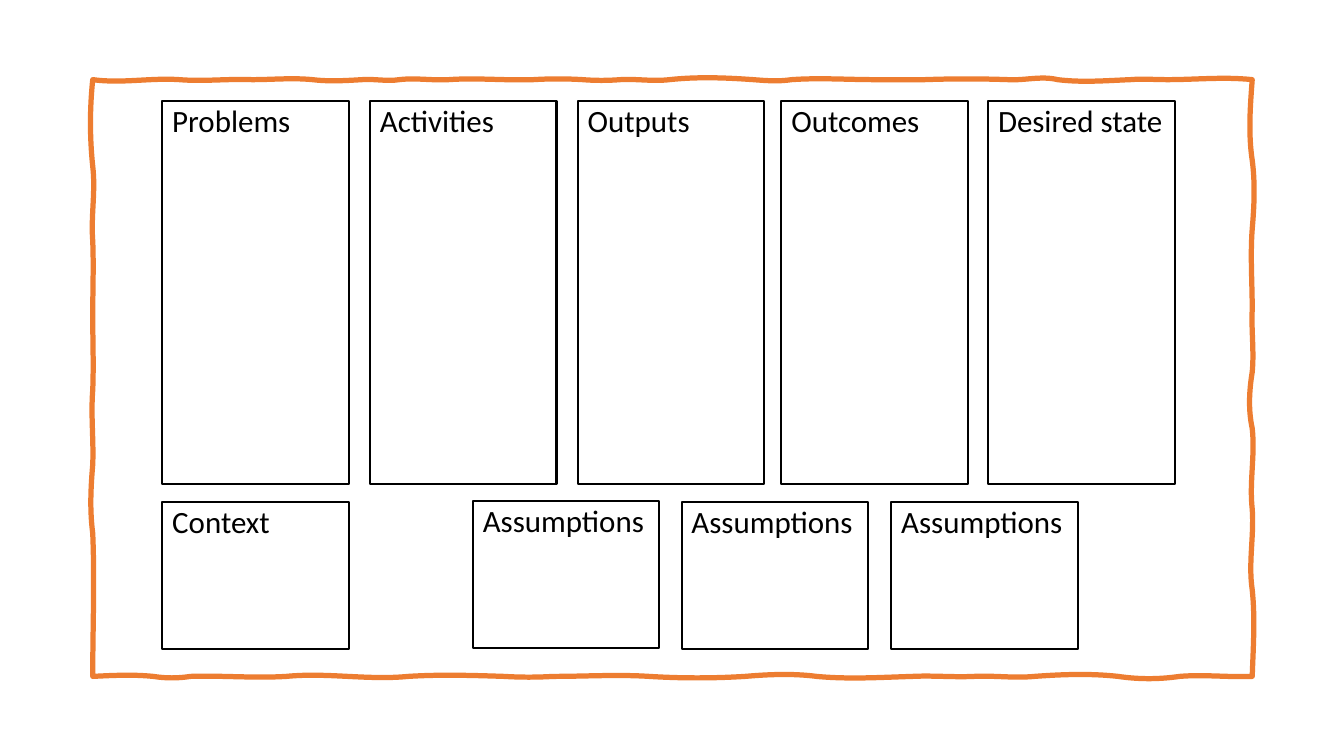
from lxml import etree
from pptx import Presentation
from pptx import util as u
from pptx.dml.color import RGBColor
from pptx.enum import shapes, text
from pptx.oxml import ns

BLACK = RGBColor(0x00, 0x00, 0x00)
ORANGE = RGBColor(0xED, 0x7D, 0x31)

FRAME_LEFT, FRAME_TOP, FRAME_RIGHT, FRAME_BOTTOM = 0.92, 0.79, 12.42, 6.71

# Each wave: end along the edge, then two sideways bends in hundredths of an inch.
BOTTOM_WAVES = [
    (1.52, -1, -2), (1.89, 2, 2), (2.84, -1, 2), (3.45, -2, -1), (4.05, 1, 2),
    (5, -2, -1), (5.49, 1, 1), (6.44, 0, -2), (7.39, 2, 2), (8.1, -2, -3),
    (9.05, 3, 1), (9.66, -1, 1), (10.26, -1, 2), (11.09, -2, -3), (11.7, 3, 3),
    (FRAME_RIGHT, -2, 1)]
RIGHT_WAVES = [
    (5.85, 1, 3), (5.05, -4, 2), (4.25, -3, 3), (3.69, -4, -3), (3.07, 2, -1),
    (2.27, 0, -2), (1.59, 2, 3), (FRAME_TOP, -4, -2)]
TOP_WAVES = [
    (11.58, -3, 0), (11.21, 0, -1), (10.49, 1, 3), (10, -4, 1), (9.17, -1, -1),
    (8.68, 0, 0), (7.85, 0, -2), (7.47, 2, 1), (6.64, -2, -3), (6.15, 2, -1),
    (5.78, 1, 1), (5.29, -1, -1), (4.45, 1, -2), (3.96, 1, -2), (3.59, 2, -1),
    (3.1, 1, 2), (2.5, -2, 0), (1.78, -1, 2), (FRAME_LEFT, -2, 4)]
LEFT_WAVES = [
    (1.65, -3, -3), (2.39, 3, -2), (3.13, 1, 0), (3.87, 0, 1), (4.61, -2, 1),
    (5.29, -2, -3), (FRAME_BOTTOM, 2, 0)]


def edge_curves(start, edge, waves, upright=False):
    curves = []
    for end, first_bend, second_bend in waves:
        third = (end - start) / 3
        points = [(start + third, edge + first_bend / 100),
                  (end - third, edge + second_bend / 100), (end, edge)]
        curves.append([(y, x) for x, y in points] if upright else points)
        start = end
    return curves


class Canvas:
    def __init__(self, page, font="Calibri", size=22.1):
        self.page = page
        self.font = font
        self.size = u.Pt(size)

    def outline(self, shape, color, width):
        shape.shadow.inherit = False
        shape.fill.background()
        shape.line.color.rgb = color
        shape.line.width = u.Pt(width)

    def wavy_frame(self, curves, color, width):
        builder = self.page.shapes.build_freeform(
            u.Inches(FRAME_LEFT), u.Inches(FRAME_BOTTOM))
        builder.add_line_segments(
            [(u.Inches(x), u.Inches(y)) for *bends, (x, y) in curves], close=True)
        frame = builder.convert_to_shape()
        segments = list(frame.element.iter(ns.qn("a:lnTo")))
        for segment, (*bends, end) in zip(segments, curves):
            segment.tag = ns.qn("a:cubicBezTo")
            for place, (x, y) in enumerate(bends):
                point = etree.Element(ns.qn("a:pt"))
                point.set("x", str(u.Inches(x) - frame.left))
                point.set("y", str(u.Inches(y) - frame.top))
                segment.insert(place, point)
        self.outline(frame, color, width)

    def labelled_box(self, label, left, top, width, height):
        box = self.page.shapes.add_shape(
            shapes.MSO_SHAPE.RECTANGLE, u.Inches(left), u.Inches(top),
            u.Inches(width), u.Inches(height))
        self.outline(box, BLACK, 1.5)
        frame = box.text_frame
        frame.word_wrap = True
        frame.vertical_anchor = text.MSO_ANCHOR.TOP
        para = frame.paragraphs[0]
        para.alignment = text.PP_ALIGN.LEFT
        para.line_spacing = 0.9
        para.space_before = u.Pt(7.9)
        span = para.add_run()
        span.text = label
        span.font.name = self.font
        span.font.size = self.size
        span.font.color.rgb = BLACK


def main():
    deck = Presentation()
    deck.slide_width = u.Inches(13.33)
    deck.slide_height = u.Inches(7.5)
    canvas = Canvas(deck.slides.add_slide(deck.slide_layouts[6]))

    curves = (edge_curves(FRAME_LEFT, FRAME_BOTTOM, BOTTOM_WAVES)
              + edge_curves(FRAME_BOTTOM, FRAME_RIGHT, RIGHT_WAVES, upright=True)
              + edge_curves(FRAME_RIGHT, FRAME_TOP, TOP_WAVES)
              + edge_curves(FRAME_TOP, FRAME_LEFT, LEFT_WAVES, upright=True))
    canvas.wavy_frame(curves, ORANGE, 3.75)

    stages = [("Problems", 1.61), ("Activities", 3.67), ("Outputs", 5.73),
              ("Outcomes", 7.75), ("Desired state", 9.8)]
    for label, left in stages:
        canvas.labelled_box(label, left, 1, 1.85, 3.8)

    canvas.labelled_box("Context", 1.61, 4.98, 1.85, 1.46)
    for left, top in [(4.69, 4.97), (6.76, 4.98), (8.84, 4.98)]:
        canvas.labelled_box("Assumptions", left, top, 1.85, 1.46)

    deck.save("out.pptx")


if __name__ == "__main__":
    main()
